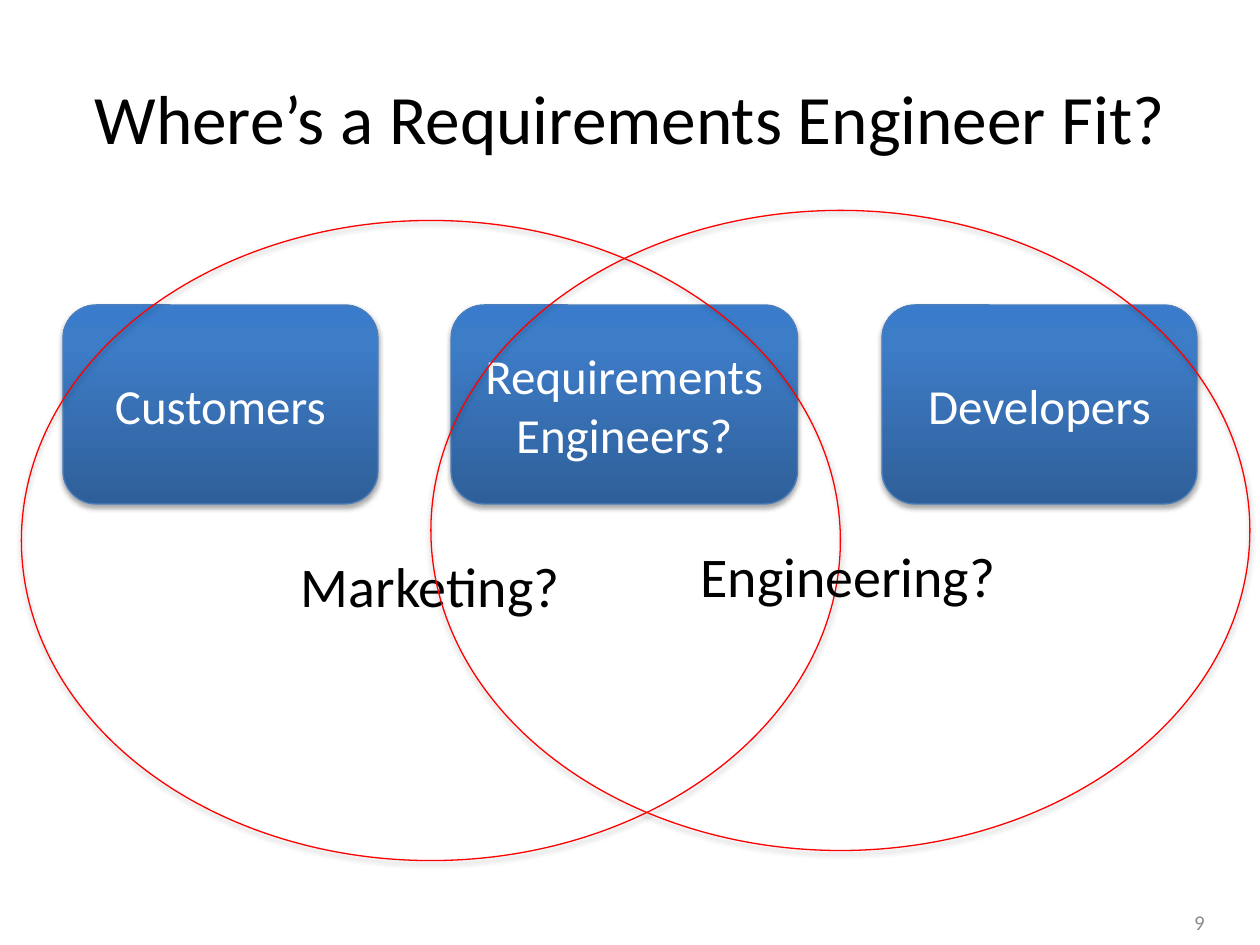
from copy import deepcopy

from lxml.etree import SubElement
from pptx import Presentation
from pptx.dml.color import RGBColor
from pptx.enum.shapes import MSO_SHAPE as Shape
from pptx.enum.text import MSO_ANCHOR as Anchor, PP_ALIGN as Align
from pptx.oxml.ns import qn
from pptx.util import Pt

PX = 9144  # 100 px to the inch
FONT = "Calibri"
BLACK = RGBColor(0x00, 0x00, 0x00)
WHITE = RGBColor(0xFF, 0xFF, 0xFF)
GREY = RGBColor(0x8C, 0x8C, 0x8C)
RED = RGBColor(0xFF, 0x00, 0x00)
BLUE_EDGE = RGBColor(0x4B, 0x7E, 0xBC)
BLUE_STOPS = [
    (0, RGBColor(0x2F, 0x5F, 0x99)),
    (0.8, RGBColor(0x3D, 0x7C, 0xC7)),
    (1, RGBColor(0x3A, 0x7C, 0xCB)),
]

TITLE = "Where’s a Requirements Engineer Fit?"
TITLE_BOX = (50, 30, 900, 125)
PAGE_NUMBER = "9"
PAGE_NUMBER_BOX = (733, 712, 233, 40)

ROLE_TOP, ROLE_HEIGHT = 242, 158
ROLES = [  # text, left, width
    ("Customers", 50, 250),
    ("Developers", 700, 250),
    ("Requirements Engineers?", 358, 275),
]

CIRCLE_SIZE = (650, 508)
LABEL_DROP, LABEL_HEIGHT = 258, 64
CIRCLES = [  # circle left and top, label text, label left and width
    (17, 175, "Marketing?", 229, 229),
    (342, 167, "Engineering?", 546, 257),
]


def emu(box):
    return [length * PX for length in box]


def write(shape, text, size, color, align=Align.CENTER, anchor=Anchor.MIDDLE, wrap=True):
    frame = shape.text_frame
    frame.text = text
    frame.word_wrap = wrap
    frame.vertical_anchor = anchor
    paragraph = frame.paragraphs[0]
    paragraph.alignment = align
    font_format = {"name": FONT, "size": Pt(size)}
    for name, value in font_format.items():
        setattr(paragraph.runs[0].font, name, value)
    paragraph.runs[0].font.color.rgb = color


def add_outlined(slide, kind, box, line_color):
    """Add a preset shape with a thin line and a soft shadow below it."""
    shape = slide.shapes.add_shape(kind, *emu(box))
    shape.line.color.rgb = line_color
    shape.line.width = Pt(0.75)
    shape.shadow.inherit = False
    effects = shape._element.spPr.find(qn("a:effectLst"))
    shadow = SubElement(effects, qn("a:outerShdw"), blurRad=str(Pt(3.1)),
                        dist=str(Pt(1.8)), dir="5400000", rotWithShape="0")
    color = SubElement(shadow, qn("a:srgbClr"), val=str(BLACK))
    SubElement(color, qn("a:alpha"), val="35000")
    return shape


def fill_blue(shape):
    fill = shape.fill
    fill.gradient()
    fill.gradient_angle = 90
    stop_list = shape._element.spPr.find(qn("a:gradFill")).find(qn("a:gsLst"))
    stop_list.append(deepcopy(stop_list[0]))
    for stop, (position, color) in zip(fill.gradient_stops, BLUE_STOPS):
        stop.position = position
        stop.color.rgb = color


def main():
    presentation = Presentation()
    presentation.slide_width, presentation.slide_height = emu((1000, 750))
    slide = presentation.slides.add_slide(presentation.slide_layouts[5])

    title = slide.shapes.title
    title.left, title.top, title.width, title.height = emu(TITLE_BOX)
    write(title, TITLE, 39.6, BLACK)

    number = slide.shapes.add_textbox(*emu(PAGE_NUMBER_BOX))
    write(number, PAGE_NUMBER, 12, GREY, Align.RIGHT)

    for text, left, width in ROLES:
        role = add_outlined(slide, Shape.ROUNDED_RECTANGLE,
                            (left, ROLE_TOP, width, ROLE_HEIGHT), BLUE_EDGE)
        fill_blue(role)
        write(role, text, 28, WHITE)

    for left, top, text, label_left, label_width in CIRCLES:
        circle = add_outlined(slide, Shape.OVAL, (left, top, *CIRCLE_SIZE), RED)
        circle.fill.background()
        label = slide.shapes.add_textbox(
            *emu((label_left, top + LABEL_DROP, label_width, LABEL_HEIGHT)))
        write(label, text, 32, BLACK, Align.LEFT, Anchor.TOP, wrap=False)

    presentation.save("out.pptx")


if __name__ == "__main__":
    main()
